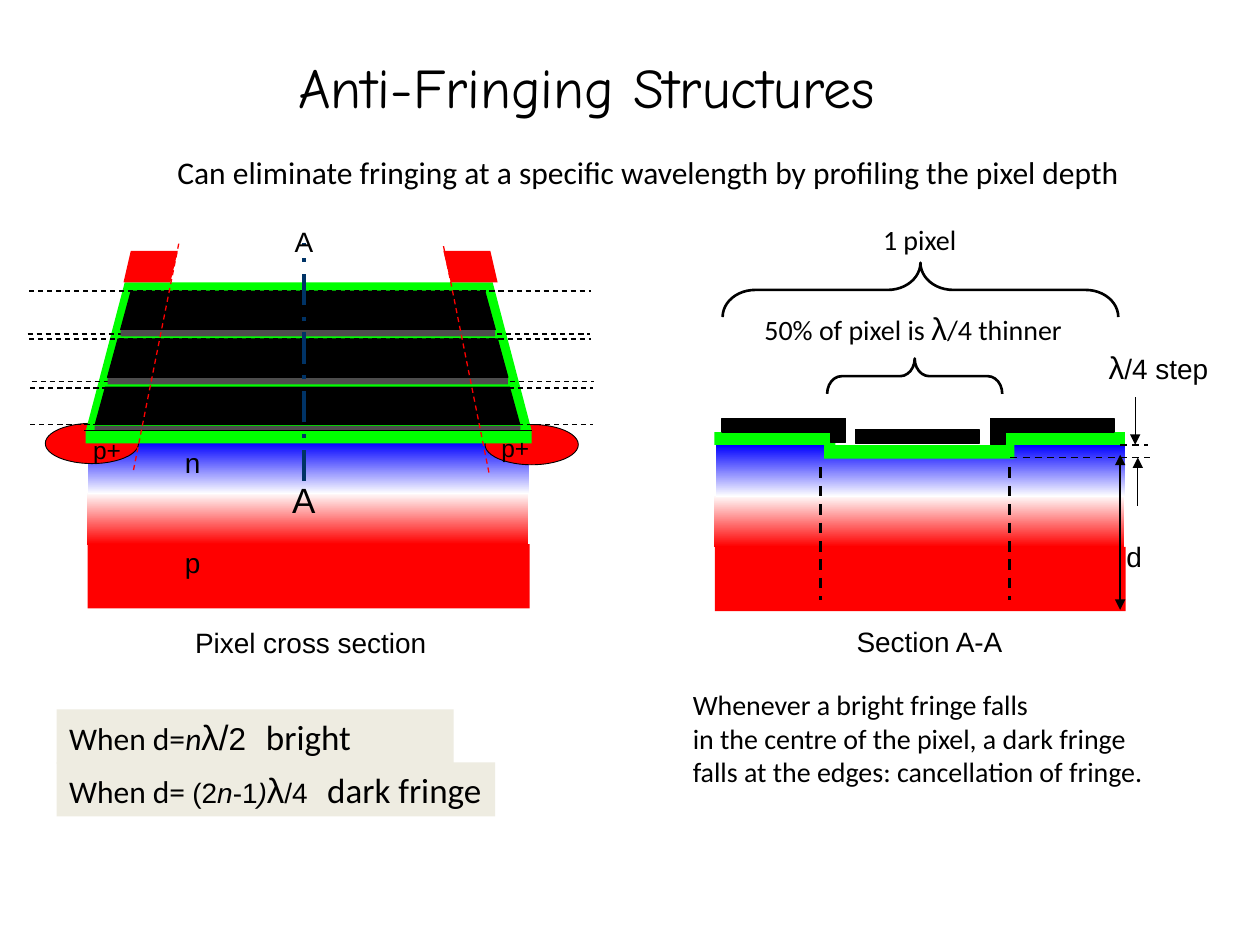
from lxml.etree import SubElement
from pptx import Presentation
from pptx.dml.color import RGBColor
from pptx.enum.dml import MSO_LINE as Dash
from pptx.enum.shapes import MSO_CONNECTOR as Link, MSO_SHAPE as Shape
from pptx.enum.text import MSO_ANCHOR as Anchor, MSO_AUTO_SIZE as AutoSize
from pptx.oxml.ns import qn
from pptx.util import Pt

BLACK = RGBColor(0x00, 0x00, 0x00)
WHITE = RGBColor(0xFF, 0xFF, 0xFF)
RED = RGBColor(0xFF, 0x00, 0x00)
GREEN = RGBColor(0x00, 0xFF, 0x00)
BLUE = RGBColor(0x00, 0x00, 0xFF)
GREY = RGBColor(0x4D, 0x4D, 0x4D)
NAVY = RGBColor(0x00, 0x33, 0x66)
BEIGE = RGBColor(0xEE, 0xEC, 0xE1)
SANS, BODY, COMIC = "Arial", "Calibri", "Comic Neue"


def paint(shape, fill=None, outline=0):
    shape.shadow.inherit = False
    if fill is None:
        shape.fill.background()
    else:
        shape.fill.solid()
        shape.fill.fore_color.rgb = fill
    if outline:
        shape.line.color.rgb = BLACK
        shape.line.width = Pt(outline)
    else:
        shape.line.fill.background()


def block(slide, left, top, width, height, fill=None, outline=0, kind=Shape.RECTANGLE):
    shape = slide.shapes.add_shape(kind, Pt(left), Pt(top), Pt(width), Pt(height))
    paint(shape, fill, outline)
    return shape


def gradient(slide, left, top, width, upper, lower):
    layer = block(slide, left, top, width, 29.5, upper)
    layer.fill.gradient()
    layer.fill.gradient_angle = 270
    for stop, color in zip(layer.fill.gradient_stops, (upper, lower)):
        stop.color.rgb = color


def trapezoid(slide, left, right, top, bottom, inset, fill, outline=0):
    builder = slide.shapes.build_freeform(Pt(left), Pt(bottom), scale=1.0)
    corners = [(left + inset, top), (right - inset, top), (right, bottom)]
    builder.add_line_segments([(Pt(x), Pt(y)) for x, y in corners], close=True)
    paint(builder.convert_to_shape(), fill, outline)


def line(slide, x1, y1, x2, y2, width=0.75, color=BLACK, dash=None, arrows=()):
    link = slide.shapes.add_connector(Link.STRAIGHT, Pt(x1), Pt(y1), Pt(x2), Pt(y2))
    link.line.color.rgb = color
    link.line.width = Pt(width)
    if dash:
        link.line.dash_style = dash
    outline = link.line._get_or_add_ln()
    for end in arrows:
        SubElement(outline, qn(f"a:{end}"), type="triangle")
    SubElement(link._element.spPr, qn("a:effectLst"))


def brace(slide, left, top, width, height, curve):
    shape = block(slide, left, top, width, height, outline=1.5, kind=Shape.RIGHT_BRACE)
    shape.rotation = 270
    shape.adjustments[0] = curve
    shape.adjustments[1] = 0.5


def style(run, size, font, italic=False):
    run.font.size = Pt(size)
    run.font.name = font
    run.font.color.rgb = BLACK
    if italic:
        run.font.italic = True


def text_box(slide, left, top, width, height):
    box = slide.shapes.add_textbox(Pt(left), Pt(top), Pt(width), Pt(height))
    box.text_frame.word_wrap = False
    box.text_frame.auto_size = AutoSize.SHAPE_TO_FIT_TEXT
    return box


def label(slide, left, top, width, height, text, size=16, font=SANS):
    frame = text_box(slide, left, top, width, height).text_frame
    frame.text = text
    for paragraph in frame.paragraphs:
        for run in paragraph.runs:
            style(run, size, font)
    return frame


def formula(slide, left, top, width, height, parts, fill=None, tab=None):
    box = text_box(slide, left, top, width, height)
    paint(box, fill)
    paragraph = box.text_frame.paragraphs[0]
    if tab:
        stops = SubElement(paragraph._p.get_or_add_pPr(), qn("a:tabLst"))
        SubElement(stops, qn("a:tab"), pos=str(Pt(tab)), algn="l")
    for text, *look in parts:
        run = paragraph.add_run()
        run.text = text
        style(run, *look)


def substrate(slide, left, top, width):
    gradient(slide, left, top + 28.8, width, WHITE, RED)
    gradient(slide, left + 0.7, top, width, BLUE, WHITE)
    block(slide, left + 0.3, top + 58.3, width + 0.7, 36.7, RED)


def clock_line(slide, left, y):
    line(slide, left, y, left + 321.3, y, dash=Dash.DASH)


def cross_section(slide):
    substrate(slide, 49.7, 252.7, 252)
    for left, top in ((277.2, 242.6), (25.9, 241.9)):
        block(slide, left, top, 53.3, 23, RED, 0.5, Shape.OVAL)
    trapezoid(slide, 49, 303.8, 161.3, 246.2, 22.3, GREEN)
    for left, y in ((15.8, 190.8), (16.6, 193.7), (18, 218.2)):
        clock_line(slide, left, y)
    for row in range(3):
        left, right = 54 + 7.5 * row, 297.4 - 7.2 * row
        top = 221 - 27.3 * row
        trapezoid(slide, left, right, top, top + 21.9, 6, BLACK, 0.75 if row else 0)
        block(slide, left, top + 22.3, right - left, 3.6, GREY)
    for left, y in ((17.3, 221.8), (16.6, 166.3)):
        clock_line(slide, left, y)
    block(slide, 49, 246.2, 254.9, 7.2, GREEN)
    line(slide, 48.2, 246.2, 303.8, 246.2, 0.5)
    clock_line(slide, 17.3, 242.6)
    line(slide, 173.5, 275, 173.5, 139, 2.25, NAVY, Dash.LONG_DASH_DOT)
    label(slide, 159.8, 270, 28.1, 31, "A", 20)
    label(slide, 161.3, 124.6, 25.2, 26.6, "A")
    line(slide, 76.3, 268.6, 102.2, 139, color=RED, dash=Dash.DASH)
    line(slide, 279.4, 270, 253.4, 140.4, color=RED, dash=Dash.DASH)
    for left, mirrored in ((70.6, False), (253.4, True)):
        stop = block(slide, left, 143.3, 31, 18, RED, kind=Shape.PARALLELOGRAM)
        stop.adjustments[0] = 0.233
        if mirrored:
            stop._element.spPr.xfrm.set("flipH", "1")
    layers = label(slide, 98.6, 251.3, 23, 84.2, "n\np")
    layers.paragraphs[1].space_before = Pt(38)
    for left, top in ((46.1, 244.8), (279.4, 244.1)):
        label(slide, left, top, 30.2, 23.8, "p+", 14)
    label(slide, 104.4, 354.2, 146.9, 26.6, "Pixel cross section")


def section_aa(slide):
    substrate(slide, 408.2, 254.2, 234)
    block(slide, 408.2, 247, 234.7, 7.2, GREEN)
    for left in (412.6, 565.9):
        block(slide, left, 239, 70.6, 7.9, BLACK, 0.75)
    block(slide, 470.9, 254.2, 108.7, 7.9, GREEN)
    block(slide, 477.4, 247, 91.4, 7.2, WHITE)
    for left, top, width in ((474.5, 244.8, 8.6), (488.9, 245.5, 70.6), (565.9, 246.2, 8.6)):
        block(slide, left, top, width, 7.9, BLACK, 0.75)
    label(slide, 482.4, 353.5, 98.6, 26.6, "Section A-A")
    line(slide, 640.1, 254.2, 655.9, 254.2, 1, dash=Dash.DASH)
    line(slide, 577.4, 261.4, 657.4, 261.4, 1, dash=Dash.DASH)
    line(slide, 648.7, 254.2, 648.7, 226.8, arrows=["headEnd"])
    line(slide, 650.2, 261.4, 650.2, 289.4, arrows=["headEnd"])
    formula(slide, 626.4, 195.1, 72.7, 28.8, [("λ", 18, SANS), ("/4 step", 16, SANS)])
    brace(slide, 512.6, 164.9, 20.2, 100.1, 0.41)
    formula(slide, 429.8, 172.8, 189.4, 28.8, [
        ("50% of pixel is ", 16, BODY), ("λ", 18, SANS), ("/4 thinner", 16, BODY)])
    line(slide, 640.1, 259.9, 640.1, 348.5, 1.5, arrows=["headEnd", "tailEnd"])
    label(slide, 636.5, 304.6, 23, 26.6, "d")
    for x in (468.7, 576.7):
        line(slide, x, 267.1, x, 342.7, 1.5, dash=Dash.DASH)
    brace(slide, 510.5, 52.6, 31, 226.1, 0.602)
    label(slide, 497.5, 123.8, 56.9, 26.6, "1 pixel", font=BODY)


def fringe_rules(slide):
    formula(slide, 32.4, 405.4, 226.8, 31, [
        ("When d=", 18, BODY), ("n", 18, BODY, True), ("λ/", 20, SANS),
        ("2", 18, SANS), ("\tbright fringe", 20, BODY)], BEIGE, 112.5)
    formula(slide, 32.4, 435.6, 250.6, 31, [
        ("When d= ", 18, BODY), ("(2", 16, SANS), ("n", 16, SANS, True),
        ("-1", 16, SANS), (")", 16, SANS, True), ("λ", 20, SANS),
        ("/4", 16, SANS), ("\tdark fringe", 20, BODY)], BEIGE, 147.5)
    label(slide, 388.8, 389.5, 272.9, 64.8,
          "Whenever a bright fringe falls\n"
          "in the centre of the pixel, a dark fringe\n"
          "falls at the edges: cancellation of fringe.", font=BODY)


def main():
    deck = Presentation()
    deck.slide_width, deck.slide_height = Pt(720), Pt(540)
    slide = deck.slides.add_slide(deck.slide_layouts[6])
    title = label(slide, 163.4, 16.6, 413.3, 65.5, "Anti-Fringing Structures", 32, COMIC)
    title.auto_size = AutoSize.NONE
    title.word_wrap = True
    title.vertical_anchor = Anchor.MIDDLE
    label(slide, 94.3, 84.2, 556.6, 28.8,
          "Can eliminate fringing at a specific wavelength by profiling the pixel depth",
          18, BODY)
    cross_section(slide)
    section_aa(slide)
    fringe_rules(slide)
    deck.save("out.pptx")


if __name__ == "__main__":
    main()
